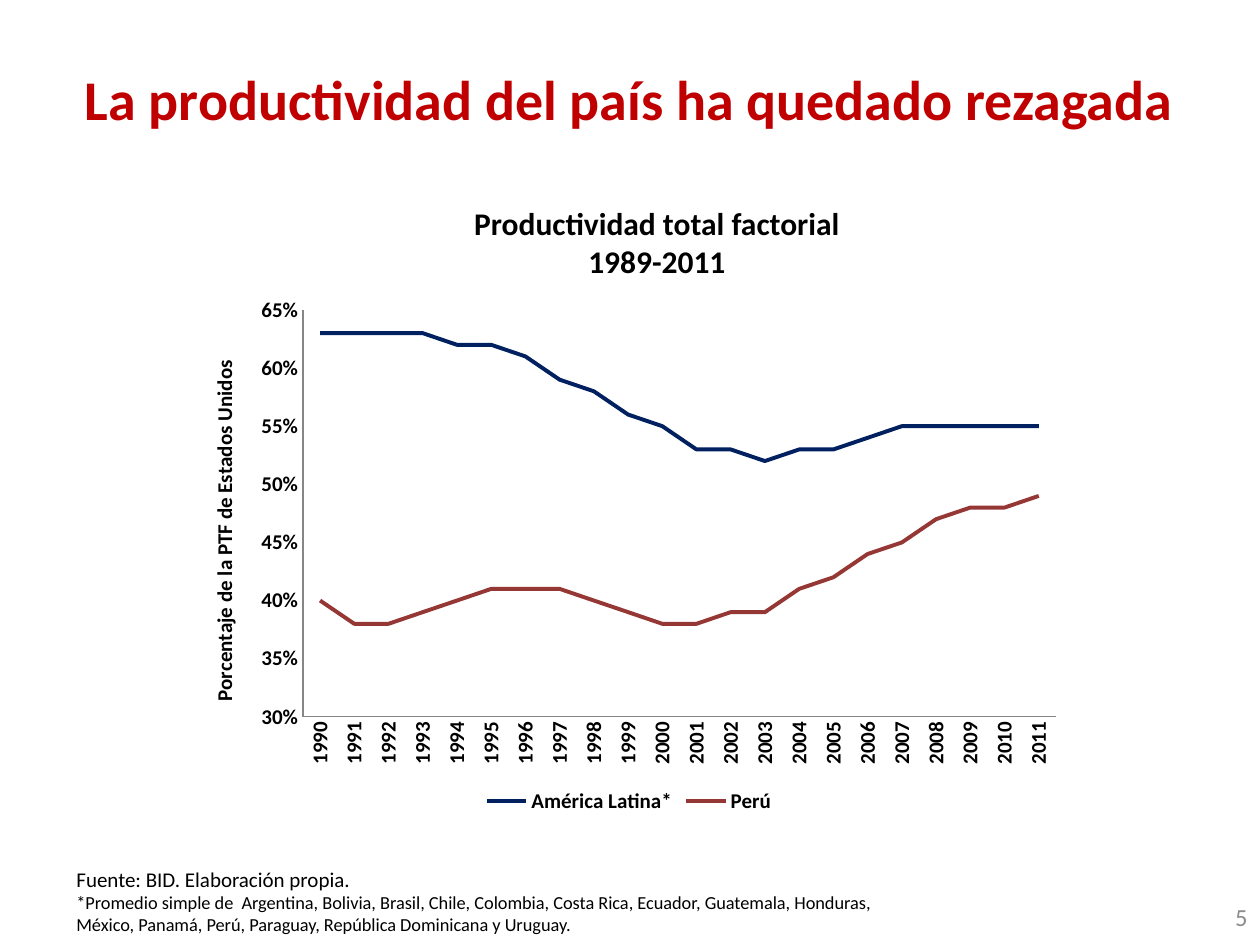
from lxml import etree
from pptx import Presentation
from pptx.chart.data import CategoryChartData
from pptx.dml.color import RGBColor
from pptx.enum.chart import XL_CHART_TYPE, XL_LEGEND_POSITION, XL_TICK_MARK
from pptx.enum.shapes import MSO_SHAPE
from pptx.enum.text import MSO_ANCHOR, PP_ALIGN
from pptx.oxml.ns import qn
from pptx.util import Emu, Pt

LEFT, CENTER, RIGHT = PP_ALIGN.LEFT, PP_ALIGN.CENTER, PP_ALIGN.RIGHT
TOP, MIDDLE = MSO_ANCHOR.TOP, MSO_ANCHOR.MIDDLE
NO_TICK = XL_TICK_MARK.NONE
RECTANGLE = MSO_SHAPE.RECTANGLE

WHITE = RGBColor(0xFF, 0xFF, 0xFF)
RED = RGBColor(0xC0, 0x00, 0x00)
BLACK = RGBColor(0x00, 0x00, 0x00)
GREY = RGBColor(0x8C, 0x8C, 0x8C)
AXIS_GREY = RGBColor(0x86, 0x86, 0x86)
NAVY = RGBColor(0x00, 0x20, 0x60)
BRICK = RGBColor(0x95, 0x37, 0x35)

FONT = "Calibri"
PX = 914400 // 126

TITLE_BOX = (34, 35, 1191, 134)
TITLE = [("La productividad del país ha quedado rezagada", 32)]

# Lines of (text, size), then box in px, colour, bold, alignment, anchor, wrap
TEXTS = [
    ([("5", 14)], (966, 892, 294, 50), GREY, False, RIGHT, MIDDLE, True),
    ([("Productividad total factorial", 18), ("1989-2011", 18)],
     (223, 198, 868, 89), BLACK, True, CENTER, TOP, True),
    ([("Fuente: BID. Elaboración propia.", 12),
      ("*Promedio simple de  Argentina, Bolivia, Brasil, Chile, Colombia, "
       "Costa Rica, Ecuador, Guatemala, Honduras,", 10.5),
      ("México, Panamá, Perú, Paraguay, República Dominicana y Uruguay.", 10.5)],
     (64, 860, 840, 83), BLACK, False, LEFT, TOP, False),
]

CHART_BOX = (184, 286, 890, 533)
PLOT_BOX = (303, 310, 753, 407)
VALUE_TITLE = "Porcentaje de la PTF de Estados Unidos"
YEARS = [str(year) for year in range(1990, 2012)]
SERIES = [
    ("América Latina*", NAVY,
     [0.63, 0.63, 0.63, 0.63, 0.62, 0.62, 0.61, 0.59, 0.58, 0.56, 0.55,
      0.53, 0.53, 0.52, 0.53, 0.53, 0.54, 0.55, 0.55, 0.55, 0.55, 0.55]),
    ("Perú", BRICK,
     [0.40, 0.38, 0.38, 0.39, 0.40, 0.41, 0.41, 0.41, 0.40, 0.39, 0.38,
      0.38, 0.39, 0.39, 0.41, 0.42, 0.44, 0.45, 0.47, 0.48, 0.48, 0.49]),
]


def px(*lengths):
    return [Emu(length * PX) for length in lengths]


def style(font, size, color=BLACK, bold=True):
    font.name, font.size, font.bold = FONT, Pt(size), bold
    font.color.rgb = color


def fill_frame(frame, lines, color, bold, align, anchor, wrap):
    frame.word_wrap, frame.vertical_anchor = wrap, anchor
    for index, (line, size) in enumerate(lines):
        paragraph = frame.add_paragraph() if index else frame.paragraphs[0]
        paragraph.text, paragraph.alignment = line, align
        style(paragraph.font, size, color, bold)


def add_title(slide):
    title = slide.shapes.add_shape(RECTANGLE, *px(*TITLE_BOX))
    title.shadow.inherit = False
    title.fill.solid()
    title.fill.fore_color.rgb = WHITE
    title.line.fill.background()
    fill_frame(title.text_frame, TITLE, RED, True, CENTER, MIDDLE, True)
    title.text_frame.paragraphs[0].line_spacing = 0.9


def place_plot(chart):
    """Fix the inner plot area as fractions of the chart box."""
    plot_area = chart.element.find(".//" + qn("c:plotArea"))
    layout = plot_area.find(qn("c:layout"))
    if layout is None:
        layout = etree.Element(qn("c:layout"))
        plot_area.insert(0, layout)
    manual = etree.SubElement(layout, qn("c:manualLayout"))
    left, top, width, height = CHART_BOX
    x, y, w, h = PLOT_BOX
    settings = [("layoutTarget", "inner"), ("xMode", "edge"), ("yMode", "edge"),
                ("x", (x - left) / width), ("y", (y - top) / height),
                ("w", w / width), ("h", h / height)]
    for tag, value in settings:
        etree.SubElement(manual, qn("c:" + tag)).set("val", str(value))


def add_productivity_chart(slide):
    data = CategoryChartData(number_format="0%")
    data.categories = YEARS
    for name, _, values in SERIES:
        data.add_series(name, values)
    chart = slide.shapes.add_chart(XL_CHART_TYPE.LINE, *px(*CHART_BOX), data).chart
    style(chart.font, 10)
    chart.has_title = False
    chart.has_legend = True
    chart.legend.position = XL_LEGEND_POSITION.BOTTOM
    chart.legend.include_in_layout = False
    style(chart.legend.font, 12)

    chart.plots[0].vary_by_categories = False
    for series, (_, color, _) in zip(chart.plots[0].series, SERIES):
        series.smooth = False
        series.format.line.color.rgb = color
        series.format.line.width = Pt(2.25)

    years, shares = chart.category_axis, chart.value_axis
    for axis in (years, shares):
        axis.major_tick_mark = axis.minor_tick_mark = NO_TICK
        axis.has_major_gridlines = False
        axis.format.line.color.rgb = AXIS_GREY
        axis.format.line.width = Pt(0.75)
        style(axis.tick_labels.font, 12)
    year_labels = chart.element.find(".//" + "/".join(
        qn(tag) for tag in ("c:catAx", "c:txPr", "a:bodyPr")))
    year_labels.set("rot", "-5400000")
    year_labels.set("vert", "horz")

    shares.minimum_scale, shares.maximum_scale, shares.major_unit = 0.3, 0.65, 0.05
    shares.tick_labels.number_format = "0%"
    shares.tick_labels.number_format_is_linked = False
    shares.has_title = True
    share_title = shares.axis_title.text_frame
    share_title.text = VALUE_TITLE
    style(share_title.paragraphs[0].font, 12)
    place_plot(chart)


def main():
    presentation = Presentation()
    presentation.slide_width, presentation.slide_height = px(1260, 945)
    slide = presentation.slides.add_slide(presentation.slide_layouts[6])
    add_title(slide)
    for lines, box, *look in TEXTS:
        fill_frame(slide.shapes.add_textbox(*px(*box)).text_frame, lines, *look)
    add_productivity_chart(slide)
    presentation.save("out.pptx")


if __name__ == "__main__":
    main()
